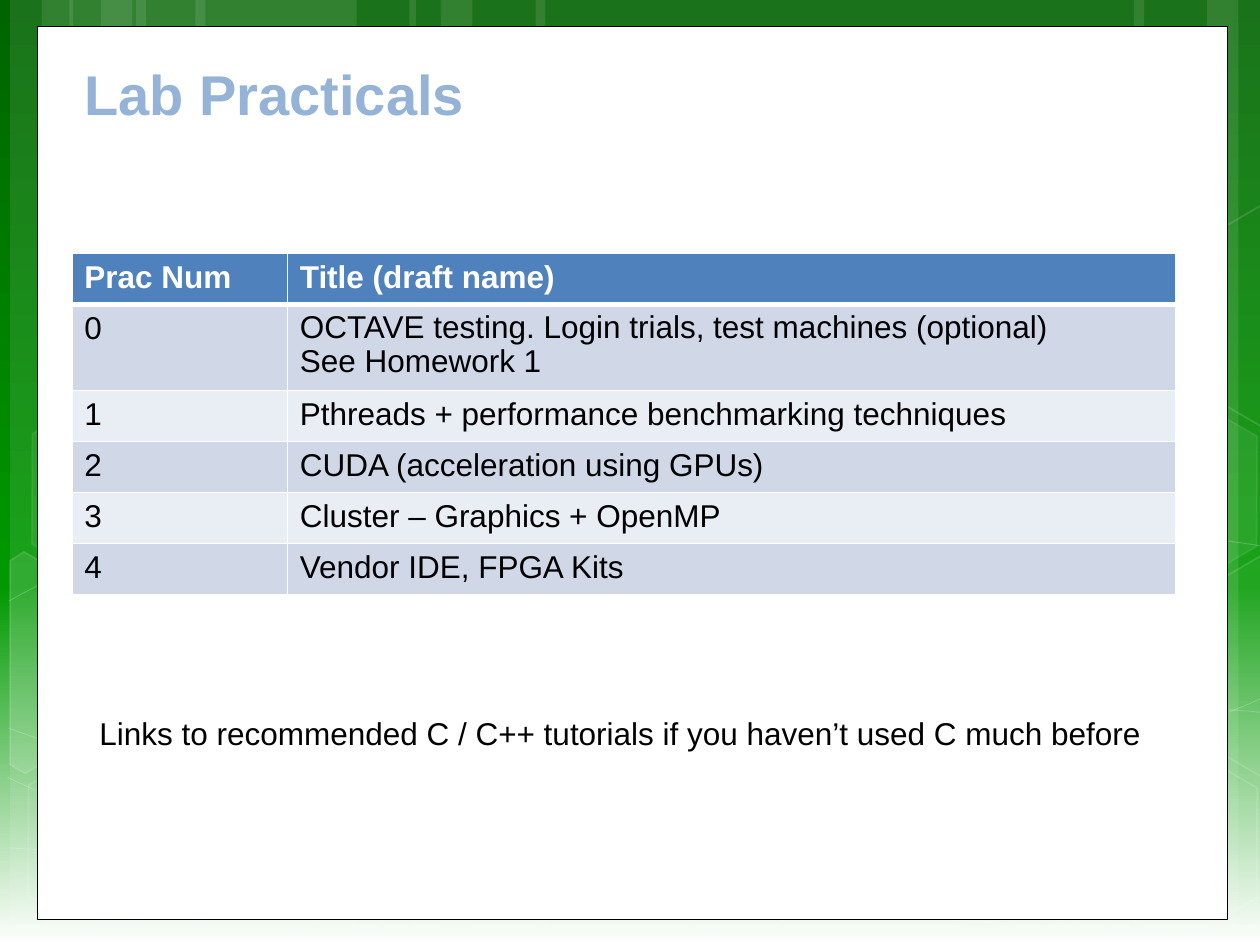
"""Build the lab practicals slide: green frame, white panel, table and note."""
from copy import deepcopy

from lxml.etree import SubElement as Sub
from pptx import Presentation
from pptx.dml.color import RGBColor as Rgb
from pptx.enum.shapes import MSO_SHAPE as Kind
from pptx.enum.text import MSO_ANCHOR as Anchor, MSO_AUTO_SIZE as Auto, PP_ALIGN as Align
from pptx.oxml.ns import qn
from pptx.util import Inches, Pt

WIDE, HIGH = 10, 7.5
FONT = "Arial"
HUES = {
    "dark": "006400", "green": "009900", "white": "FFFFFF", "black": "000000",
    "title": "95B3D7", "head": "4F81BD", "odd": "D0D8E8", "even": "E9EDF4",
}
TITLE = "Lab Practicals"
NOTE = "Links to recommended C / C++ tutorials if you haven’t used C much before"
ROWS = [
    ("Prac Num", "Title (draft name)"),
    ("0", "OCTAVE testing. Login trials, test machines (optional)\nSee Homework 1"),
    ("1", "Pthreads + performance benchmarking techniques"),
    ("2", "CUDA (acceleration using GPUs)"),
    ("3", "Cluster – Graphics + OpenMP"),
    ("4", "Vendor IDE, FPGA Kits"),
]
COLS = (1.71, 7.05)
ROW, TALL = Pt(29.2), Pt(47.4)
STOPS = [(0, "dark"), (0.62, "green"), (1, "white")]
STRIPS = [
    (1.08, 1.75), (0.08, 0.5), (0.33, 0.83), (1.55, 1.75), (0.55, 0.5), (0.8, 0.83),
    (7.33, 1.75), (9.58, 0.5), (9, 0.83), (4.25, 3.08), (3.25, 0.5), (3.5, 0.83),
]
CURVES = [
    [(0.07, 6.73), (0.61, 6.76), (1.15, 6.79), (1.9, 6.78), (2.65, 6.77), (3.58, 6.75),
     (4.58, 6.65), (5.58, 6.55), (7, 6.36), (7.92, 6.17), (8.83, 5.98), (9.77, 5.68),
     (10.07, 5.51)],
    [(0.07, 4.77), (0.36, 4.61), (0.65, 4.46), (1.21, 4.31), (1.78, 4.16), (2.59, 3.94),
     (3.47, 3.87), (4.36, 3.8), (5.44, 3.79), (6.54, 3.87), (7.64, 3.95), (9.47, 4.26),
     (10.07, 4.34)],
    [(0.06, 6.17), (1.27, 6.72), (2.47, 7.27), (3.34, 7.49)],
    [(0.07, 5.78), (0.38, 5.89), (0.7, 6), (1.28, 6.16), (1.86, 6.31), (2.73, 6.56),
     (3.57, 6.73), (4.4, 6.9), (5.45, 7.08), (6.28, 7.18), (7.11, 7.29), (8, 7.33),
     (8.53, 7.36), (9.05, 7.4), (9.19, 7.38), (9.45, 7.38), (9.71, 7.37), (9.89, 7.35),
     (10.07, 7.34)],
    [(2.42, 7.49), (2.6, 7.29), (2.78, 7.09), (3.02, 6.91), (3.26, 6.73), (3.6, 6.53),
     (3.88, 6.39), (4.16, 6.25), (4.33, 6.19), (4.7, 6.09), (5.06, 5.99), (5.73, 5.85),
     (6.08, 5.78), (6.44, 5.71), (6.49, 5.71), (6.8, 5.69), (7.11, 5.66), (7.6, 5.63),
     (7.94, 5.62), (8.29, 5.61), (8.86, 5.62), (8.86, 5.62), (8.86, 5.62), (9.53, 5.62),
     (9.53, 5.62), (9.71, 5.63), (9.88, 5.64), (9.97, 5.65), (10.06, 5.66), (10.03, 5.65),
     (10.06, 5.66)],
]
HEXES = [
    (4.97, 5.89, 6, 12), (0.11, 5.91, 0, 12), (0.14, 3.12, 7, 8),
    (1.74, 5.92, 0, 12), (8.34, 5.93, 0, 12), (8.34, 3.14, 7, 8),
]
HALVES = [
    ([(0.08, 4.45), (0.19, 4.38), (0.96, 4.82), (0.95, 5.7), (0.2, 6.14), (0.08, 6.07)], 10),
    ([(9.26, 4.85), (10.01, 4.41), (10.09, 4.46), (10.09, 6.13), (10.02, 6.17),
      (9.26, 5.73)], 4),
    ([(9.26, 2.07), (10.01, 1.63), (10.1, 1.68), (10.09, 3.35), (10.02, 3.39),
      (9.26, 2.95)], 0),
]


def tint(name):
    return Rgb.from_string(HUES[name])


def box(*nums):
    return [Inches(n) for n in nums]


def veil(shape, fill=0, line=0, width=1):
    """Paint a shape in white at the given opacity per cent."""
    shape.shadow.inherit = False
    if fill:
        shape.fill.solid()
        shape.fill.fore_color.rgb = tint("white")
    else:
        shape.fill.background()
    if line:
        shape.line.color.rgb = tint("white")
        shape.line.width = Pt(width)
    else:
        shape.line.fill.background()
    marks = shape.element.spPr.iter(qn("a:srgbClr"))
    for mark, share in zip(list(marks), [n for n in (fill, line) if n]):
        Sub(mark, qn("a:alpha"), val=str(share * 1000))


def trace(shapes, pts, close):
    """Draw an outline through points in inches."""
    first, *rest = [tuple(box(*p)) for p in pts]
    pen = shapes.build_freeform(*first)
    pen.add_line_segments(rest, close=close)
    return pen.convert_to_shape()


def bend(shape):
    """Turn each three line segments into one cubic curve."""
    track = shape.element.find(".//" + qn("a:path"))
    legs = track.findall(qn("a:lnTo"))
    for i in range(0, len(legs), 3):
        curve = Sub(track, qn("a:cubicBezTo"))
        for leg in legs[i:i + 3]:
            curve.append(leg[0])
            track.remove(leg)
    return shape


def write(frame, text, size=18, hue="black", bold=False):
    """Fill a text frame, one paragraph a line."""
    frame.text = text
    for para in frame.paragraphs:
        para.alignment = Align.LEFT
        if "\n" in text:
            para.line_spacing = 0.97
        for run in para.runs:
            font = run.font
            font.name, font.size, font.bold = FONT, Pt(size), bold
            font.color.rgb = tint(hue)


def fit(frame):
    frame.word_wrap = False
    frame.auto_size = Auto.SHAPE_TO_FIT_TEXT
    frame.vertical_anchor = Anchor.TOP


def edge(cell, top, low):
    """Rule the four sides of a cell in white."""
    props = cell._tc.get_or_add_tcPr()
    for i, (side, wide) in enumerate(zip("LRTB", (1, 1, top, low))):
        line = Sub(props, qn("a:ln" + side), w=str(Pt(wide)))
        Sub(Sub(line, qn("a:solidFill")), qn("a:srgbClr"), val=HUES["white"])
        props.insert(i, line)


def paint(slide):
    """Set the background gradient."""
    fill = slide.background.fill
    fill.gradient()
    fill.gradient_angle = 270
    stops = slide.element.find(".//" + qn("a:gsLst"))
    stops.append(deepcopy(stops[-1]))
    for stop, (place, hue) in zip(fill.gradient_stops, STOPS):
        stop.position = place
        stop.color.rgb = tint(hue)


def adorn(shapes):
    """Draw strips, curves, hexagons and the panel over them."""
    for left, wide in STRIPS:
        veil(shapes.add_shape(Kind.RECTANGLE, *box(left, 0, wide, HIGH)), fill=10)
    for pts in CURVES:
        veil(bend(trace(shapes, pts, False)), line=20, width=0.5)
    for left, top, fill, line in HEXES:
        cell = shapes.add_shape(Kind.HEXAGON, *box(left, top, 1.75, 1.52))
        cell.adjustments[0] = 0.285
        cell.rotation = 30
        veil(cell, fill, line)
    for pts, fill in HALVES:
        veil(trace(shapes, pts, True), fill, 12)
    panel = shapes.add_shape(Kind.RECTANGLE, *box(0.3, 0.21, 9.44, 7.09))
    veil(panel, fill=100)
    panel.line.color.rgb = tint("black")
    panel.line.width = Pt(0.5)


def sink(slide):
    """Move the decoration to the back of the slide's layout."""
    tree = slide.slide_layout.shapes.element
    decor = [s for s in slide.shapes if not s.is_placeholder]
    for i, shape in enumerate(decor):
        shape.element.nvSpPr.cNvPr.set("id", str(100 + i))
        tree.insert(2 + i, shape.element)


def grid(shapes):
    """Add the table of practicals."""
    highs = [TALL if "\n" in row[1] else ROW for row in ROWS]
    spot = box(0.57, 2.01, sum(COLS))
    table = shapes.add_table(len(ROWS), len(COLS), *spot, sum(highs)).table
    for col, wide in zip(table.columns, COLS):
        col.width = Inches(wide)
    for r, row in enumerate(ROWS):
        table.rows[r].height = highs[r]
        head = r == 0
        for c, text in enumerate(row):
            cell = table.cell(r, c)
            cell.fill.solid()
            cell.fill.fore_color.rgb = tint("head" if head else "odd" if r % 2 else "even")
            edge(cell, 3 if r == 1 else 1, 3 if head else 1)
            write(cell.text_frame, text, hue="white" if head else "black", bold=head)


def main():
    deck = Presentation()
    deck.slide_width, deck.slide_height = box(WIDE, HIGH)
    slide = deck.slides.add_slide(deck.slide_layouts[5])
    shapes = slide.shapes
    paint(slide)
    adorn(shapes)
    sink(slide)
    grid(shapes)
    title = shapes.title
    title.left, title.top, title.width, title.height = box(0.57, 0.42, 3.24, 0.64)
    write(title.text_frame, TITLE, size=32, hue="title", bold=True)
    fit(title.text_frame)
    note = shapes.add_textbox(*box(0.69, 5.62, 8.55, 0.4)).text_frame
    write(note, NOTE)
    fit(note)
    deck.save("out.pptx")


if __name__ == "__main__":
    main()
